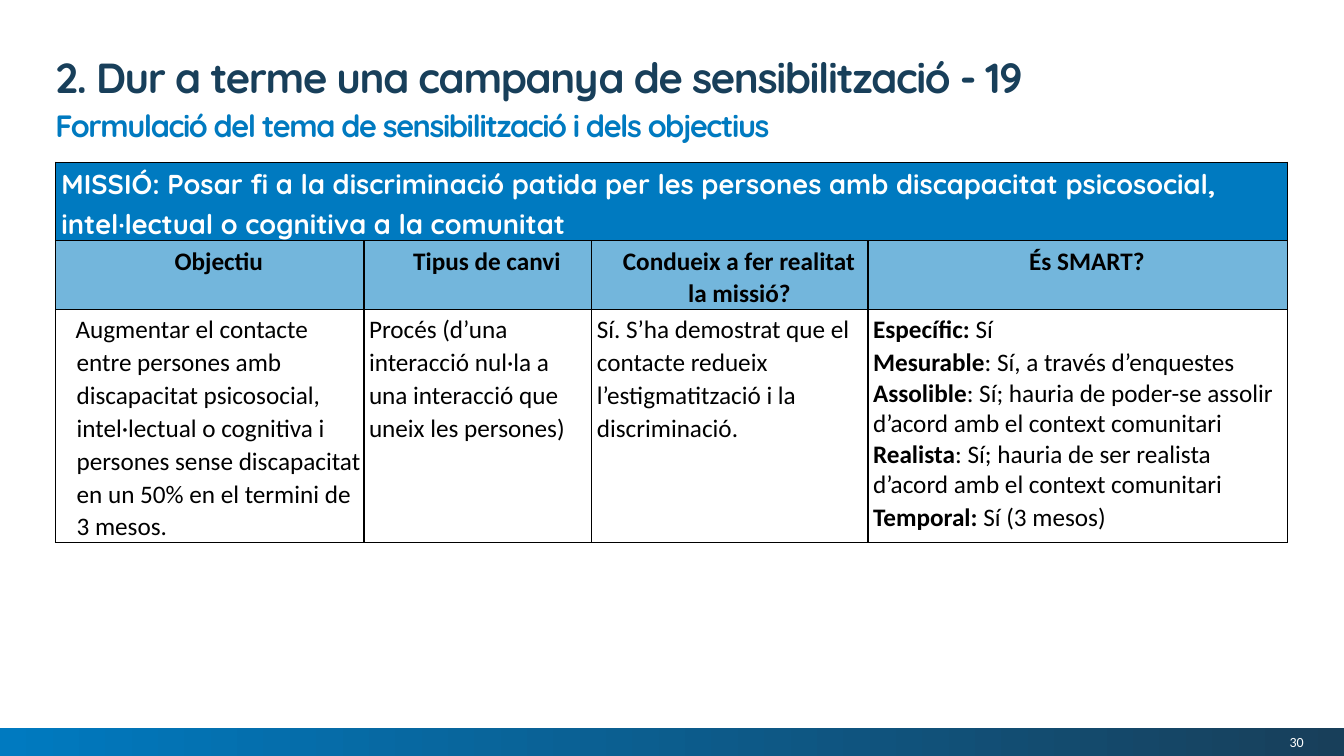
from lxml import etree
from pptx import Presentation
from pptx import util as u
from pptx.dml.color import RGBColor
from pptx.enum import shapes, text
from pptx.oxml.ns import qn

NAVY, BLUE, SKY, WHITE, BLACK = "183F5A", "007AC0", "73B6DC", "FFFFFF", "000000"
LEFT, WIDTH = 0.55, 12.22

TITLE = "2. Dur a terme una campanya de sensibilització - 19"
SUBTITLE = "Formulació del tema de sensibilització i dels objectius"
PAGE_NUMBER = "30"
MISSION = ("MISSIÓ: Posar fi a la discriminació patida per les persones amb "
           "discapacitat psicosocial, intel·lectual o cognitiva a la comunitat")
HEADERS = ["Objectiu", "Tipus de canvi", "Condueix a fer realitat la missió?", "És SMART?"]
ANSWERS = [
    "Augmentar el contacte entre persones amb discapacitat psicosocial, intel·lectual o "
    "cognitiva i persones sense discapacitat en un 50% en el termini de 3 mesos.",
    "Procés (d’una interacció nul·la a una interacció que uneix les persones)",
    "Sí. S’ha demostrat que el contacte redueix l’estigmatització i la discriminació.",
]
SMART = [  # bold label, plain text, line spacing
    ("Específic: ", "Sí", 1.07),
    ("Mesurable", ": Sí, a través d’enquestes", 1.07),
    ("Assolible", ": Sí; hauria de poder-se assolir d’acord amb el context comunitari", 0.99),
    ("Realista", ": Sí; hauria de ser realista d’acord amb el context comunitari", 0.99),
    ("Temporal: ", "Sí (3 mesos)", 1.07),
]
COLUMN_WIDTHS = [3.06, 2.26, 2.74, 4.16]
ROW_HEIGHTS = [0.78, 0.68, 2.31]


def color(value):
    return RGBColor.from_string(value)


def place(shape, left, top, width, height):
    shape.left, shape.top = u.Inches(left), u.Inches(top)
    shape.width, shape.height = u.Inches(width), u.Inches(height)


def set_margins(target, left=0, top=0, right=0, bottom=0):
    target.margin_left, target.margin_top = u.Inches(left), u.Inches(top)
    target.margin_right, target.margin_bottom = u.Inches(right), u.Inches(bottom)


def style_span(span, size, font, shade, bold=False):
    span.font.size, span.font.name, span.font.bold = u.Pt(size), font, bold
    span.font.color.rgb = color(shade)


def set_indent(para, margin, first_line):
    properties = para._p.get_or_add_pPr()
    properties.set("marL", str(u.Inches(margin)))
    properties.set("indent", str(u.Inches(first_line)))


def fill_heading(shape, words, size, shade, anchor):
    """Write a one-line heading in tight bold Quicksand."""
    frame = shape.text_frame
    frame.text = words
    frame.word_wrap, frame.auto_size = True, text.MSO_AUTO_SIZE.NONE
    frame.vertical_anchor = anchor
    set_margins(frame)
    para = frame.paragraphs[0]
    etree.SubElement(para._p.get_or_add_pPr(), qn("a:buNone"))
    para.alignment = text.PP_ALIGN.LEFT
    para.line_spacing, para.space_before = u.Pt(33), u.Pt(0)
    span = para.runs[0]
    style_span(span, size, "Quicksand", shade, True)
    span._r.get_or_add_rPr().set("spc", "-100")
    return para


def add_borders(cell):
    properties = cell._tc.get_or_add_tcPr()
    for side in ("lnL", "lnR", "lnT", "lnB"):
        line = etree.SubElement(properties, qn("a:" + side), w=str(u.Pt(1)))
        fill = etree.SubElement(line, qn("a:solidFill"))
        etree.SubElement(fill, qn("a:srgbClr"), val=BLACK)


def fill_cell(cell, paragraphs, margin=0, align=text.PP_ALIGN.LEFT):
    """Write paragraphs given as (bold text, plain text, line spacing)."""
    set_margins(cell, 0.05, 0.03, 0.02)
    frame = cell.text_frame
    for index, (label, words, spacing) in enumerate(paragraphs):
        para = frame.add_paragraph() if index else frame.paragraphs[0]
        set_indent(para, margin, -0.01)
        para.alignment, para.line_spacing = align, spacing
        for part, bold in ((label, True), (words, False)):
            if part:
                span = para.add_run()
                span.text = part
                style_span(span, 18, "Calibri", BLACK, bold)


def add_footer(page):
    bar = page.shapes.add_shape(shapes.MSO_SHAPE.RECTANGLE, 0, u.Inches(7.22),
                                u.Inches(13.33), u.Inches(0.28))
    bar.shadow.inherit = False
    bar.line.fill.background()
    bar.fill.gradient()
    bar.fill.gradient_angle = 0
    for stop, shade, position in zip(bar.fill.gradient_stops, (BLUE, NAVY), (0, 1)):
        stop.color.rgb, stop.position = color(shade), position
    box = page.shapes.add_textbox(u.Inches(11.13), u.Inches(7.24), u.Inches(1.8), u.Inches(0.24))
    frame = box.text_frame
    frame.text, frame.word_wrap = PAGE_NUMBER, True
    frame.vertical_anchor = text.MSO_ANCHOR.MIDDLE
    set_margins(frame)
    frame.paragraphs[0].alignment = text.PP_ALIGN.RIGHT
    style_span(frame.paragraphs[0].runs[0], 10, "Calibri", WHITE)


def add_goals_table(page):
    table = page.shapes.add_table(3, 4, u.Inches(LEFT), u.Inches(1.61), u.Inches(WIDTH),
                                  u.Inches(sum(ROW_HEIGHTS))).table
    table.first_row = table.horz_banding = False
    for column, width in zip(table.columns, COLUMN_WIDTHS):
        column.width = u.Inches(width)
    for row, height, shade in zip(table.rows, ROW_HEIGHTS, (BLUE, SKY, None)):
        row.height = u.Inches(height)
        for cell in row.cells:
            add_borders(cell)
            if shade:
                cell.fill.solid()
                cell.fill.fore_color.rgb = color(shade)
            else:
                cell.fill.background()

    mission = table.cell(0, 0)
    mission.merge(table.cell(0, 3))
    mission.text_frame.text = MISSION
    set_margins(mission, 0.06, 0, 0.06)
    para = mission.text_frame.paragraphs[0]
    para.line_spacing, para.space_after = 1.15, u.Pt(6)
    style_span(para.runs[0], 19.5, "Quicksand", WHITE, True)

    for index, header in enumerate(HEADERS):
        fill_cell(table.cell(1, index), [(header, "", 1.07)], 0.16, text.PP_ALIGN.CENTER)
    for index, answer in enumerate(ANSWERS):
        fill_cell(table.cell(2, index), [("", answer, 1.07)], 0 if index else 0.16)
    fill_cell(table.cell(2, 3), SMART)


def main():
    deck = Presentation()
    deck.slide_width, deck.slide_height = u.Inches(13.33), u.Inches(7.5)
    page = deck.slides.add_slide(deck.slide_layouts[1])
    add_footer(page)
    title, subtitle = page.shapes.title, page.placeholders[1]
    place(title, LEFT, 0.55, 12.31, 0.45)
    fill_heading(title, TITLE, 30, NAVY, text.MSO_ANCHOR.TOP)
    place(subtitle, LEFT, 1.04, WIDTH, 0.39)
    para = fill_heading(subtitle, SUBTITLE, 22, BLUE, text.MSO_ANCHOR.BOTTOM)
    set_indent(para, 0.31, -0.31)
    add_goals_table(page)
    deck.save("out.pptx")


if __name__ == "__main__":
    main()
